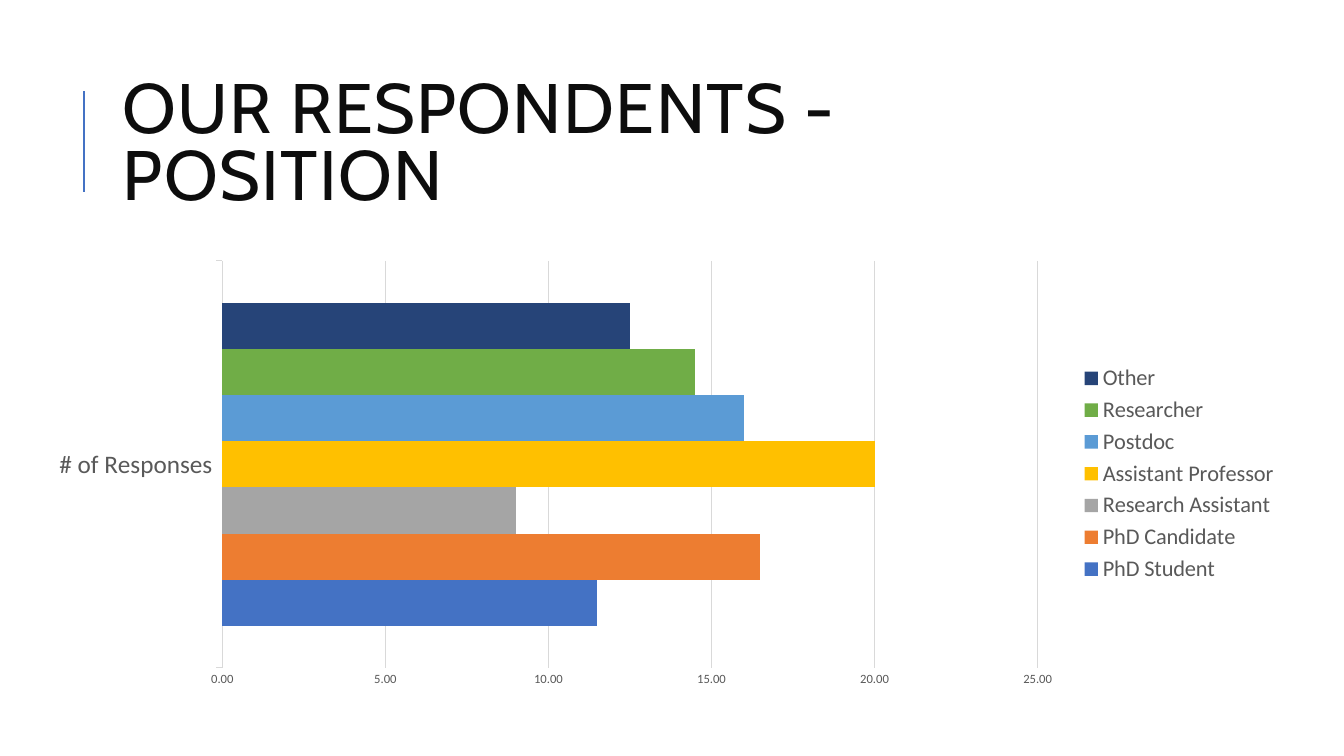
from lxml.etree import SubElement
from pptx import Presentation
from pptx.chart.data import CategoryChartData as ChartData
from pptx.dml.color import RGBColor as RGB
from pptx.enum.chart import XL_CHART_TYPE as ChartType
from pptx.enum.chart import XL_LEGEND_POSITION as LegendPosition
from pptx.enum.chart import XL_TICK_MARK as TickMark
from pptx.enum.shapes import MSO_CONNECTOR as Connector
from pptx.enum.text import MSO_ANCHOR as Anchor
from pptx.oxml.ns import qn
from pptx.util import Pt

COLORS = {
    "accent": "4472C4",
    "title": "0D0D0D",
    "text": "595959",
    "grid": "D9D9D9",
    "chart": "000000",
}

# Position, number of responses, bar colour
POSITIONS = [
    ("PhD Student", 11.5, "4472C4"),
    ("PhD Candidate", 16.5, "ED7D31"),
    ("Research Assistant", 9, "A5A5A5"),
    ("Assistant Professor", 20, "FFC000"),
    ("Postdoc", 16, "5B9BD5"),
    ("Researcher", 14.5, "70AD47"),
    ("Other", 12.5, "264478"),
]


def apply(target, values):
    for name, value in values.items():
        setattr(target, name, value)


class SlideBuilder:
    title_font = "Cabin"
    chart_font = "Calibri"

    def __init__(self, slide):
        self.shapes = slide.shapes

    def style_font(self, font, name, size, color):
        apply(font, {"name": name, "size": Pt(size), "bold": False})
        font.color.rgb = RGB.from_string(COLORS[color])

    def style_line(self, line, color, width):
        line.color.rgb = RGB.from_string(COLORS[color])
        line.width = Pt(width)

    def rule(self, x1, y1, x2, y2, color, width):
        rule = self.shapes.add_connector(
            Connector.STRAIGHT, Pt(x1), Pt(y1), Pt(x2), Pt(y2))
        self.style_line(rule.line, color, width)
        SubElement(rule._element.spPr, qn("a:effectLst"))

    def title(self, text, left, top, width, height, size):
        box = self.shapes.add_textbox(Pt(left), Pt(top), Pt(width), Pt(height))
        frame = box.text_frame
        apply(frame, {"word_wrap": True, "vertical_anchor": Anchor.MIDDLE})
        paragraph = frame.paragraphs[0]
        paragraph.line_spacing = 0.8
        run = paragraph.add_run()
        run.text = text
        self.style_font(run.font, self.title_font, size, "title")
        run.font._element.set("spc", "100")

    def bar_chart(self, category, bars, left, top, width, height):
        data = ChartData(number_format="0.00")
        data.categories = [category]
        for name, value, _ in bars:
            data.add_series(name, [value])
        chart = self.shapes.add_chart(
            ChartType.BAR_CLUSTERED, Pt(left), Pt(top), Pt(width), Pt(height),
            data).chart
        apply(chart, {"has_title": False, "has_legend": True})
        self.style_font(chart.font, self.chart_font, 10, "chart")

        # Bars
        plot = chart.plots[0]
        apply(plot, {"gap_width": 182, "overlap": 0,
                     "vary_by_categories": False})
        for series, (_, _, color) in zip(plot.series, bars):
            series.format.fill.solid()
            series.format.fill.fore_color.rgb = RGB.from_string(color)

        # Axes
        positions, counts = chart.category_axis, chart.value_axis
        apply(positions, {"major_tick_mark": TickMark.OUTSIDE,
                          "minor_tick_mark": TickMark.NONE,
                          "has_major_gridlines": False})
        apply(counts, {"major_tick_mark": TickMark.NONE,
                       "minor_tick_mark": TickMark.NONE,
                       "has_major_gridlines": True})
        apply(counts.tick_labels, {"number_format": "0.00",
                                   "number_format_is_linked": False})
        self.style_font(positions.tick_labels.font, self.chart_font, 18, "text")
        self.style_font(counts.tick_labels.font, self.chart_font, 9, "text")
        self.style_line(positions.format.line, "grid", 0.75)
        self.style_line(counts.major_gridlines.format.line, "grid", 0.75)
        counts.format.line.fill.background()

        # Legend
        apply(chart.legend, {"position": LegendPosition.RIGHT,
                             "include_in_layout": False})
        self.style_font(chart.legend.font, self.chart_font, 16, "text")


def main():
    deck = Presentation()
    apply(deck, {"slide_width": Pt(960), "slide_height": Pt(540)})
    respondents = SlideBuilder(deck.slides.add_slide(deck.slide_layouts[6]))

    # Heading with accent rule
    respondents.rule(60, 137, 60, 65, "accent", 1.5)
    respondents.title("OUR RESPONDENTS - POSITION", 80.64, 46, 765.36, 118, 50)

    # Responses by position
    respondents.bar_chart("# of Responses", POSITIONS, 24.5, 180, 896.4, 316.8)

    deck.save("out.pptx")


if __name__ == "__main__":
    main()
